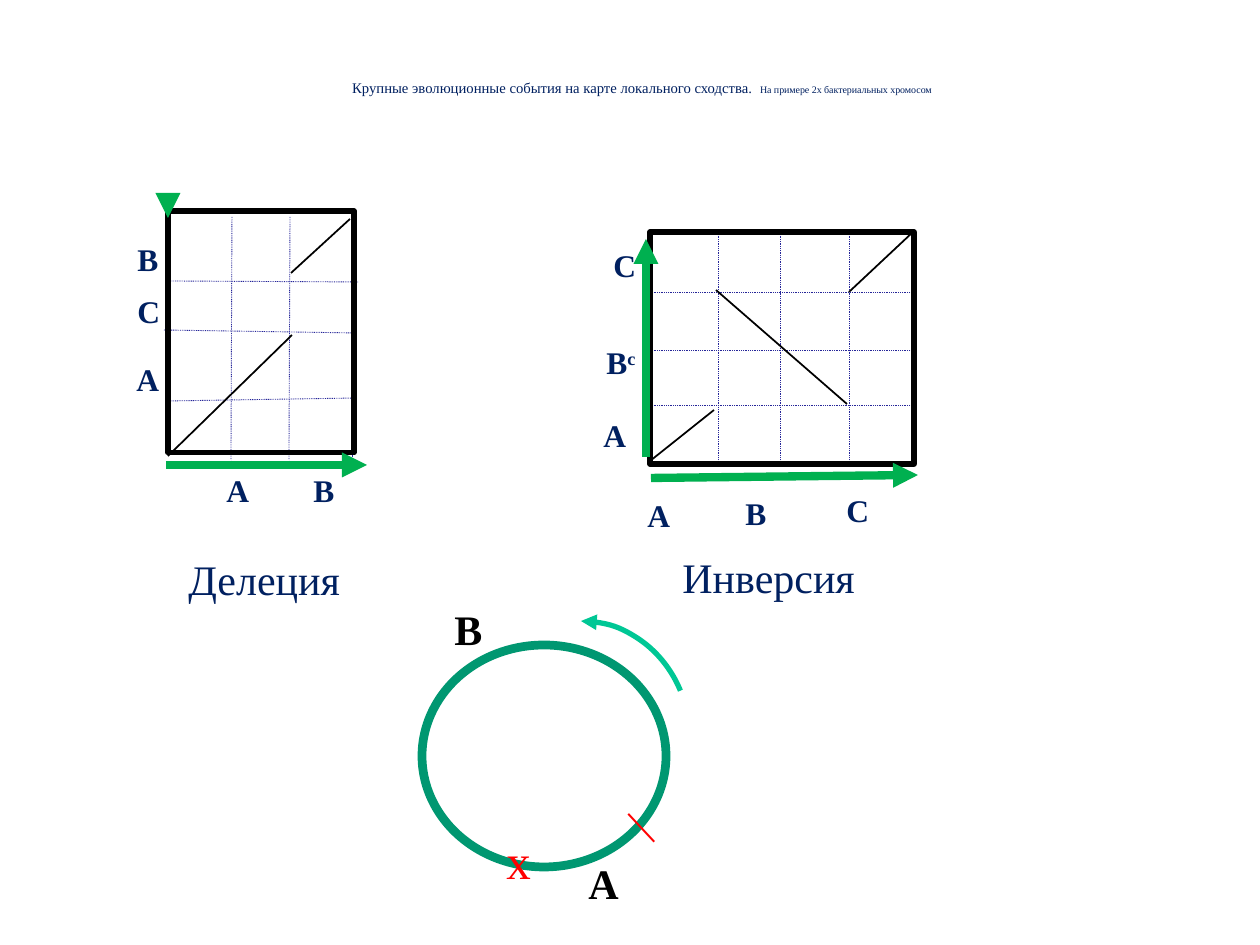
from dataclasses import dataclass

from lxml.etree import SubElement
from pptx import Presentation
from pptx.dml.color import RGBColor
from pptx.enum.dml import MSO_LINE
from pptx.enum.shapes import MSO_CONNECTOR, MSO_SHAPE
from pptx.enum.text import MSO_ANCHOR, MSO_AUTO_SIZE, PP_ALIGN
from pptx.oxml.ns import qn
from pptx.util import Emu, Pt


@dataclass(frozen=True)
class Theme:
    font: str = "Times New Roman"
    navy: str = "002060"
    black: str = "000000"
    red: str = "FF0000"
    grid: str = "262699"
    axis: str = "00B050"
    ring: str = "009771"
    turn: str = "00C795"
    title: float = 8.4
    subtitle: float = 5.7
    label: int = 18
    caption: int = 24
    cross: int = 28


class Board:
    """Draws styled elements on one slide, with lengths in px at 126 to the inch."""

    def __init__(self, prs, theme):
        self.theme = theme
        prs.slide_width, prs.slide_height = self.emu(1260, 945)
        self.s = prs.slides.add_slide(prs.slide_layouts[5])

    def emu(self, *px):
        return [Emu(round(v * 914400 / 126)) for v in px]

    def style_line(self, line, color, width, end=None):
        line.color.rgb = RGBColor.from_string(color)
        line.width = Pt(width)
        if end:
            SubElement(line._get_or_add_ln(), qn(f"a:{end}"), type="triangle")

    def title(self, box, main, detail):
        sp = self.s.shapes.title
        sp.left, sp.top, sp.width, sp.height = self.emu(*box)
        tf = sp.text_frame
        tf.auto_size = MSO_AUTO_SIZE.NONE
        tf.vertical_anchor = MSO_ANCHOR.MIDDLE
        p = tf.paragraphs[0]
        p.alignment = PP_ALIGN.CENTER
        p.font.name = self.theme.font
        p.font.color.rgb = RGBColor.from_string(self.theme.navy)
        for text, size in ((main, self.theme.title), (detail, self.theme.subtitle)):
            r = p.add_run()
            r.text = text
            r.font.size = Pt(size)

    def text(self, text, box, size, color, bold=False, wrap=False, sup="", turn=0):
        sp = self.s.shapes.add_textbox(*self.emu(*box))
        sp.rotation = turn
        tf = sp.text_frame
        tf.word_wrap = wrap
        tf.auto_size = MSO_AUTO_SIZE.SHAPE_TO_FIT_TEXT
        p = tf.paragraphs[0]
        p.font.name = self.theme.font
        p.font.size = Pt(size)
        p.font.bold = bold
        p.font.color.rgb = RGBColor.from_string(color)
        p.add_run().text = text
        if sup:
            r = p.add_run()
            r.text = sup
            r._r.get_or_add_rPr().set("baseline", "30000")

    def label(self, text, x, y, width=48, sup=""):
        self.text(text, (x, y, width, 50), self.theme.label, self.theme.navy,
                  bold=True, wrap=True, sup=sup)

    def line(self, ends, color, width, dotted=False, end=None):
        sp = self.s.shapes.add_connector(MSO_CONNECTOR.STRAIGHT, *self.emu(*ends))
        SubElement(sp._element.spPr, qn("a:effectLst"))
        if dotted:
            sp.line.dash_style = MSO_LINE.ROUND_DOT
        self.style_line(sp.line, color, width, end)

    def outline(self, kind, box, color, width, end=None):
        sp = self.s.shapes.add_shape(kind, *self.emu(*box))
        sp.shadow.inherit = False
        sp.fill.background()
        self.style_line(sp.line, color, width, end)
        return sp

    def dot_plot(self, frame, grid, matches, axes, labels):
        t = self.theme
        for ends in grid:
            self.line(ends, t.grid, 0.5, dotted=True)
        self.outline(MSO_SHAPE.RECTANGLE, frame, t.black, 3)
        for ends in matches:
            self.line(ends, t.black, 1)
        for label in labels:
            self.label(*label)
        for ends in axes:
            self.line(ends, t.axis, 4.75, end="tailEnd")


def main():
    prs = Presentation()
    t = Theme()
    board = Board(prs, t)
    board.title((99, 47, 1086, 81),
                "Крупные эволюционные события на карте локального сходства.  ",
                "На примере 2х бактериальных хромосом")

    board.dot_plot(
        frame=(650, 232, 264, 232),
        grid=[(x, 232, x, 464) for x in (718, 780, 849)]
        + [(650, y, 914, y) for y in (292, 350, 405)],
        matches=[(716, 290, 847, 404), (650, 461, 714, 410), (849, 292, 912, 233)],
        axes=[(646, 457, 646, 239), (651, 478, 918, 475)],
        labels=[("A", 635, 490), ("B", 733, 488), ("C", 834, 485),
                ("B", 594, 337, 57, "c"), ("C", 601, 240), ("A", 591, 410)])

    board.dot_plot(
        frame=(168, 211, 186, 242),
        grid=[(232, 217, 231, 460), (290, 217, 289, 460), (352, 226, 352, 469),
              (168, 281, 359, 282), (164, 330, 355, 333), (168, 401, 355, 398)],
        matches=[(168, 456, 292, 335), (291, 273, 350, 219)],
        axes=[(168, 209, 168, 218), (166, 465, 367, 465)],
        labels=[("B", 301, 465), ("A", 214, 465), ("A", 124, 354),
                ("B", 125, 234), ("С", 125, 286)])

    board.text("Делеция", (176, 547, 190, 63), t.caption, t.navy, wrap=True)
    board.text("Инверсия", (670, 545, 212, 63), t.caption, t.navy, wrap=True)

    board.text("B", (442, 597, 53, 63), t.caption, t.black, bold=True)
    board.text("A", (576, 851, 55, 63), t.caption, t.black, bold=True)
    board.outline(MSO_SHAPE.OVAL, (422, 645, 244, 222), t.ring, 5)
    board.text("x", (494, 824, 49, 72), t.cross, t.red)
    board.text("|", (613, 774, 86, 63), t.caption, t.red, wrap=True, turn=316.9)
    arc = board.outline(MSO_SHAPE.ARC, (472, 621, 218, 236), t.turn, 3, end="headEnd")
    arc.adjustments[0], arc.adjustments[1] = 162, 200.45

    prs.save("out.pptx")


if __name__ == "__main__":
    main()
